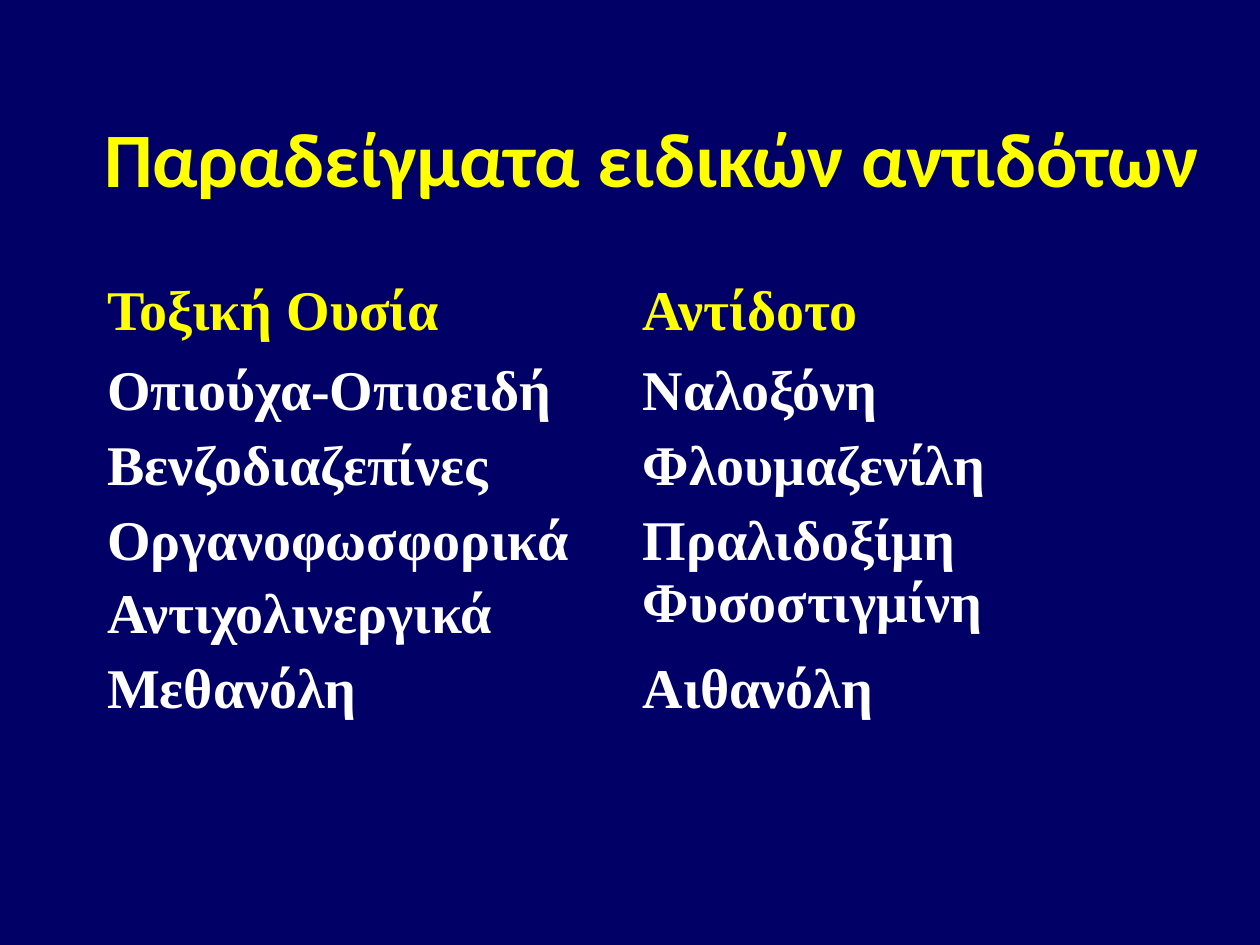
from lxml import etree
from pptx import Presentation
from pptx.dml.color import RGBColor
from pptx.enum import text
from pptx.oxml.ns import qn
from pptx.util import Inches, Pt

COLORS = {"background": "000066", "heading": "FFFF00", "body": "FFFFFF"}
NO_STYLE = "{2D5ABB26-0587-4C30-8999-92F81FD0307C}"
ROW_HEIGHTS = [0.63, 0.47, 0.53, 1.07, 0.63, 0.65, 0.65]
COLUMN_WIDTH = 4.25
ANTIDOTES = [
    ("Τοξική Ουσία", "Αντίδοτο"),
    ("Οπιούχα-Οπιοειδή", "Ναλοξόνη"),
    ("Βενζοδιαζεπίνες", "Φλουμαζενίλη"),
    ("Οργανοφωσφορικά\nΑντιχολινεργικά", "Πραλιδοξίμη Φυσοστιγμίνη"),
    ("Μεθανόλη", "Αιθανόλη"),
    ("", ""),
    ("", ""),
]


def format_runs(para, font_name, size, color):
    for span in para.runs:
        span.font.name = font_name
        span.font.size = Pt(size)
        span.font.bold = True
        span.font.color.rgb = RGBColor.from_string(COLORS[color])


def set_space_before(para, percent):
    """Set paragraph spacing as a share of the line height."""
    spacing = etree.SubElement(para._p.get_or_add_pPr(), qn("a:spcBef"))
    etree.SubElement(spacing, qn("a:spcPct"), val=str(percent * 1000))


def add_title(page, wording):
    title = page.shapes.title
    title.left, title.top = Inches(0.35), Inches(0.58)
    title.width, title.height = Inches(9.65), Inches(1.33)
    frame = title.text_frame
    frame.text = wording
    frame.word_wrap = True
    frame.vertical_anchor = text.MSO_ANCHOR.MIDDLE
    para = frame.paragraphs[0]
    para.alignment = text.PP_ALIGN.CENTER
    format_runs(para, "Calibri", 44, "heading")


def fill_cell(cell, wording, color):
    cell.fill.background()
    if not wording:
        return
    cell.text_frame.text = wording
    for para in cell.text_frame.paragraphs:
        set_space_before(para, 20)
        format_runs(para, "Times New Roman", 32, color)


def add_antidote_table(page):
    frame = page.shapes.add_table(
        len(ANTIDOTES), 2, Inches(0.75), Inches(2.18),
        Inches(2 * COLUMN_WIDTH), Inches(sum(ROW_HEIGHTS)))
    table = frame.table
    table.first_row = table.horz_banding = False
    table._tbl.tblPr.find(qn("a:tableStyleId")).text = NO_STYLE
    for column in table.columns:
        column.width = Inches(COLUMN_WIDTH)
    for index, (row, height) in enumerate(zip(table.rows, ROW_HEIGHTS)):
        row.height = Inches(height)
        color = "body" if index else "heading"
        for cell, wording in zip(row.cells, ANTIDOTES[index]):
            fill_cell(cell, wording, color)


def main():
    deck = Presentation()
    deck.slide_width, deck.slide_height = Inches(10), Inches(7.5)
    page = deck.slides.add_slide(deck.slide_layouts[5])
    background = page.background.fill
    background.solid()
    background.fore_color.rgb = RGBColor.from_string(COLORS["background"])
    add_title(page, "Παραδείγματα ειδικών αντιδότων")
    add_antidote_table(page)
    deck.save("out.pptx")


if __name__ == "__main__":
    main()
